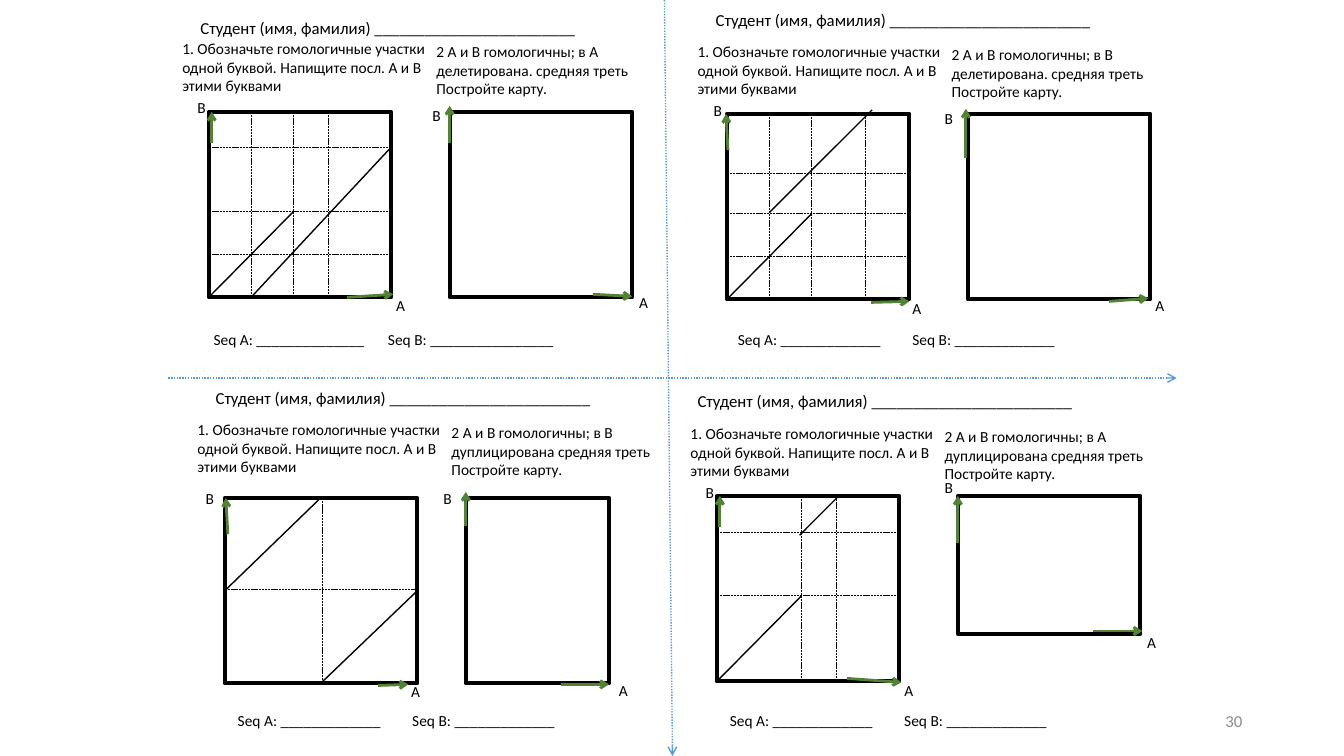
"""Build a four-part handout of dot-plot exercises on homologous sequences."""
from dataclasses import dataclass
from typing import Optional

from lxml.etree import SubElement
from pptx import Presentation
from pptx.dml.color import RGBColor
from pptx.enum.dml import MSO_LINE_DASH_STYLE as Dash
from pptx.enum.shapes import MSO_CONNECTOR as Connector, MSO_SHAPE as Shape
from pptx.enum.text import MSO_ANCHOR as Anchor, MSO_AUTO_SIZE as AutoSize, PP_ALIGN as Align
from pptx.oxml.ns import qn
from pptx.slide import Slide
from pptx.text.text import TextFrame
from pptx.util import Inches, Pt

BLACK = RGBColor(0x00, 0x00, 0x00)
GREEN = RGBColor(0x54, 0x82, 0x35)
BLUE = RGBColor(0x5B, 0x9B, 0xD5)
GRAY = RGBColor(0x8C, 0x8C, 0x8C)
FONT = "Calibri"

NAME_LINE = "Студент (имя, фамилия) " + "_" * 24
LETTERS_TASK = "1. Обозначьте гомологичные участки одной буквой. Напищите посл. A и B этими буквами"
MAP_TASK = "2 A и B гомологичны; в {} средняя треть Постройте карту."

Point = tuple[float, float]
Segment = tuple[Point, Point]
Box = tuple[float, float, float, float]


@dataclass(frozen=True)
class Plot:
    """A square plot with its axis arrows, axis letters, grid and diagonals."""
    frame: Box
    arrow_a: Segment
    arrow_b: Segment
    letter_a: Point
    letter_b: Point
    columns: tuple[float, ...] = ()
    rows: tuple[float, ...] = ()
    diagonals: tuple[Segment, ...] = ()


@dataclass(frozen=True)
class Worksheet:
    """One quarter of the handout."""
    name: Point
    task: Point
    change: str
    sequences: Point
    plots: tuple[Plot, Plot]
    blanks: Point = (13, 13)
    blank_widths: Point = (1.63, 1.63)


WORKSHEETS = (
    Worksheet(
        (1.89, 0.13), (1.71, 0.34), "A делетирована.", (2.02, 3.23),
        (
            Plot((2.07, 1.11, 1.81, 1.84), ((3.44, 2.95), (3.9, 2.92)), ((2.1, 1.42), (2.1, 1.11)),
                 (3.83, 2.89), (1.86, 0.92), (2.49, 2.91, 3.26), (1.46, 2.1, 2.52),
                 (((2.07, 2.95), (2.91, 2.1)), ((2.49, 2.95), (3.88, 1.46)))),
            Plot((4.46, 1.11, 1.81, 1.84), ((5.88, 2.92), (6.27, 2.94)), ((4.46, 1.42), (4.46, 1.05)),
                 (6.24, 2.86), (4.19, 1)),
        ),
        (14, 16), (1.71, 1.86),
    ),
    Worksheet(
        (2.04, 3.8), (1.86, 4.12), "B дуплицирована", (2.26, 7.01),
        (
            Plot((2.23, 4.94, 1.91, 1.84), ((3.75, 6.8), (4.05, 6.79)), ((2.26, 5.3), (2.24, 4.94)),
                 (3.98, 6.72), (1.94, 4.8), (3.2,), (5.85,),
                 (((2.23, 5.86), (3.18, 4.94)), ((3.18, 6.78), (4.14, 5.86)))),
            Plot((4.62, 4.94, 1.42, 1.84), ((5.56, 6.79), (6.04, 6.79)), ((4.62, 5.22), (4.62, 4.88)),
                 (6.04, 6.71), (4.3, 4.8)),
        ),
    ),
    Worksheet(
        (6.82, 3.83), (6.75, 4.16), "A дуплицирована", (7.14, 7.01),
        (
            Plot((7.11, 4.92, 1.81, 1.84), ((8.4, 6.73), (8.94, 6.77)), ((7.14, 5.23), (7.14, 4.92)),
                 (8.87, 6.71), (6.9, 4.74), (7.95, 8.3), (5.28, 5.91),
                 (((7.11, 6.76), (7.95, 5.91)), ((7.93, 5.31), (8.32, 4.92)))),
            Plot((9.5, 4.92, 1.81, 1.37), ((10.84, 6.26), (11.33, 6.26)), ((9.5, 5.39), (9.5, 4.92)),
                 (11.28, 6.23), (9.27, 4.69)),
        ),
    ),
    Worksheet(
        (7, 0.05), (6.82, 0.37), "B делетирована.", (7.22, 3.23),
        (
            Plot((7.21, 1.13, 1.81, 1.84), ((8.64, 3), (9.02, 2.99)), ((7.22, 1.49), (7.2, 1.13)),
                 (8.95, 2.92), (6.98, 0.95), (7.63, 8.05, 8.58), (1.72, 2.12, 2.54),
                 (((7.21, 2.97), (8.05, 2.12)), ((7.63, 2.11), (8.65, 1.09)))),
            Plot((9.6, 1.13, 1.81, 1.84), ((11, 2.99), (11.39, 2.96)), ((9.58, 1.57), (9.58, 1.08)),
                 (11.36, 2.89), (9.27, 1.03)),
        ),
    ),
)
DIVIDERS: tuple[Segment, ...] = (((6.59, 0), (6.67, 7.5)), ((1.67, 3.75), (11.67, 3.75)))


def add_text(slide: Slide, text: str, box: Box, size: float = 11, wrap: bool = False,
             color: RGBColor = BLACK) -> TextFrame:
    """Add a one-run text box and return its text frame."""
    frame = slide.shapes.add_textbox(*map(Inches, box)).text_frame
    frame.word_wrap = wrap
    frame.auto_size = AutoSize.SHAPE_TO_FIT_TEXT
    run = frame.paragraphs[0].add_run()
    run.text = text
    run.font.name = FONT
    run.font.size = Pt(size)
    run.font.color.rgb = color
    return frame


def add_line(slide: Slide, segment: Segment, width: float, color: RGBColor = BLACK,
             dash: Optional[Dash] = None, arrow: bool = False) -> None:
    """Add a straight line, optionally dashed or ending in an arrowhead."""
    start, end = segment
    connector = slide.shapes.add_connector(Connector.STRAIGHT, *map(Inches, start + end))
    connector.line.color.rgb = color
    connector.line.width = Pt(width)
    if dash is not None:
        connector.line.dash_style = dash
    properties = connector._element.spPr
    if arrow:
        SubElement(properties.find(qn("a:ln")), qn("a:tailEnd"), type="arrow")
    SubElement(properties, qn("a:effectLst"))


def add_plot(slide: Slide, plot: Plot) -> None:
    """Draw a plot from its grid up to its axis letters."""
    left, top, width, height = plot.frame
    grid = [((x, top), (x, top + height)) for x in plot.columns]
    grid += [((left, y), (left + width, y)) for y in plot.rows]
    for segment in grid:
        add_line(slide, segment, 0.5, dash=Dash.SQUARE_DOT)
    square = slide.shapes.add_shape(Shape.RECTANGLE, *map(Inches, plot.frame))
    square.shadow.inherit = False
    square.fill.background()
    square.line.color.rgb = BLACK
    square.line.width = Pt(3)
    for segment in plot.diagonals:
        add_line(slide, segment, 1)
    for segment in (plot.arrow_a, plot.arrow_b):
        add_line(slide, segment, 2, GREEN, arrow=True)
    for letter, position in (("A", plot.letter_a), ("B", plot.letter_b)):
        add_text(slide, letter, (*position, 0.29, 0.29))


def add_worksheet(slide: Slide, worksheet: Worksheet) -> None:
    """Draw the tasks, plots and answer lines of one quarter."""
    left, top = worksheet.task
    add_text(slide, LETTERS_TASK, (left, top, 2.67, 0.66), wrap=True)
    add_text(slide, NAME_LINE, (*worksheet.name, 3.97, 0.3), size=12)
    add_text(slide, MAP_TASK.format(worksheet.change), (left + 2.52, top + 0.03, 2.36, 0.66), wrap=True)
    for plot in worksheet.plots:
        add_plot(slide, plot)
    left, top = worksheet.sequences
    answers = zip("AB", worksheet.blanks, worksheet.blank_widths)
    for index, (letter, blanks, width) in enumerate(answers):
        add_text(slide, f"Seq {letter}: " + "_" * blanks, (left + 1.73 * index, top, width, 0.29))


def main() -> None:
    """Build and save the handout."""
    presentation = Presentation()
    presentation.slide_width = Inches(13.33)
    presentation.slide_height = Inches(7.5)
    slide = presentation.slides.add_slide(presentation.slide_layouts[6])
    for worksheet in WORKSHEETS:
        add_worksheet(slide, worksheet)
    for divider in DIVIDERS:
        add_line(slide, divider, 1, BLUE, Dash.ROUND_DOT, arrow=True)
    number = add_text(slide, "30", (9.42, 6.95, 3, 0.4), size=12, wrap=True, color=GRAY)
    number.auto_size = AutoSize.NONE
    number.vertical_anchor = Anchor.MIDDLE
    number.paragraphs[0].alignment = Align.RIGHT
    presentation.save("out.pptx")


if __name__ == "__main__":
    main()
